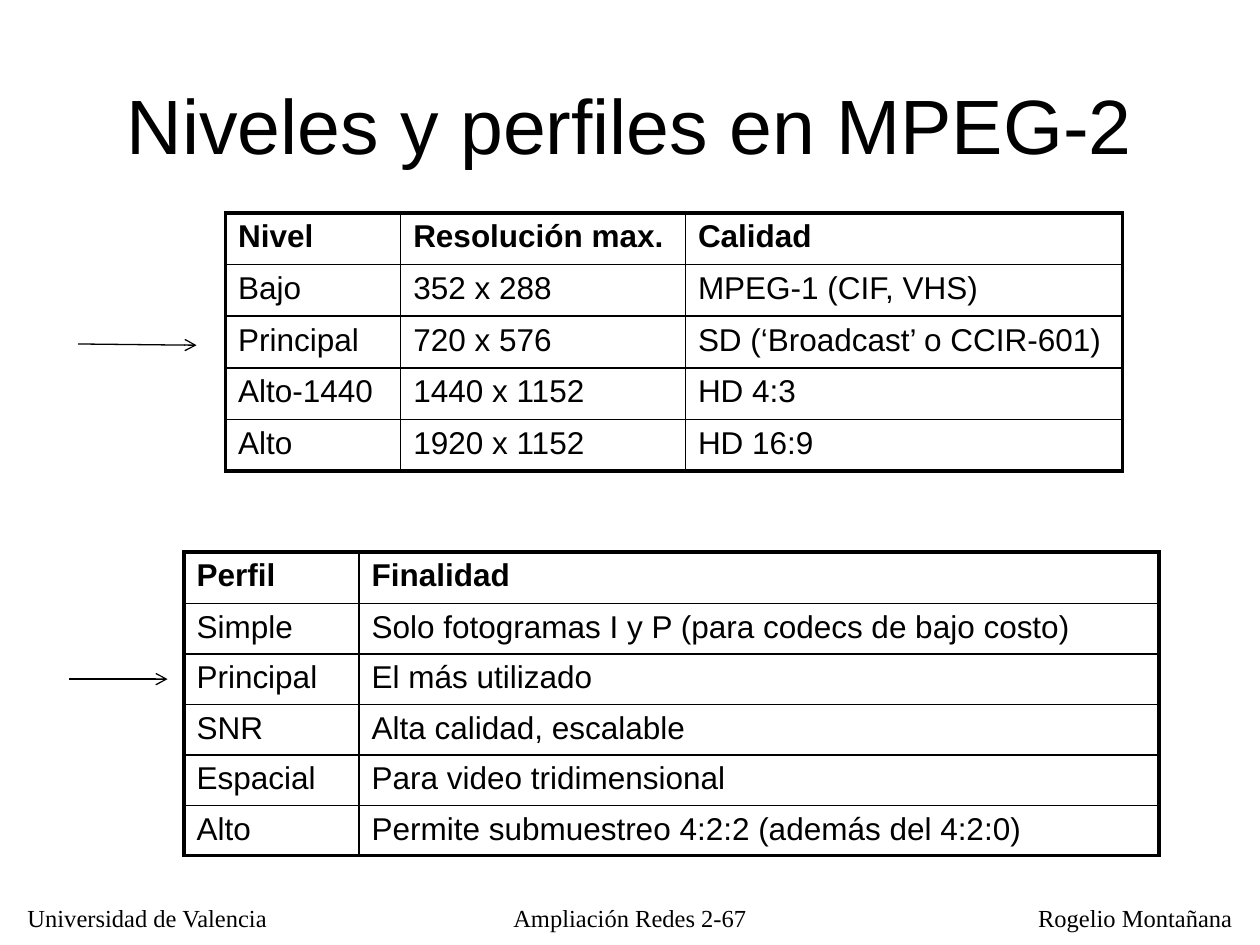
from dataclasses import dataclass

from lxml import etree
from pptx import Presentation
from pptx.dml.color import RGBColor
from pptx.enum import shapes, text
from pptx.oxml.ns import qn
from pptx.util import Inches, Pt


@dataclass(frozen=True)
class Theme:
    ink: RGBColor = RGBColor(0, 0, 0)
    sans: str = "Arial"
    serif: str = "Times New Roman"
    title: float = 44
    body: float = 18
    foot: float = 14
    thick: float = 2.25
    thin: float = 1
    arrow: float = 0.75


@dataclass(frozen=True)
class Grid:
    left: float
    top: float
    cols: list[float]
    head: float
    row: float
    data: list[list[str]]


@dataclass(frozen=True)
class Note:
    left: float
    width: float
    words: str
    align: text.PP_ALIGN
    wrap: bool


@dataclass(frozen=True)
class Arrow:
    left: float
    right: float
    start: float
    end: float


THEME = Theme()
ALIGN = text.PP_ALIGN

LEVELS = Grid(1.79, 1.69, [1.39, 2.26, 3.47], 0.41, 0.41, [
    ["Nivel", "Resolución max.", "Calidad"],
    ["Bajo", "352 x 288", "MPEG-1 (CIF, VHS)"],
    ["Principal", "720 x 576", "SD (‘Broadcast’ o CCIR-601)"],
    ["Alto-1440", "1440 x 1152", "HD 4:3"],
    ["Alto", "1920 x 1152", "HD 16:9"],
])
PROFILES = Grid(1.46, 4.38, [1.39, 6.35], 0.41, 0.4, [
    ["Perfil", "Finalidad"],
    ["Simple", "Solo fotogramas I y P (para codecs de bajo costo)"],
    ["Principal", "El más utilizado"],
    ["SNR", "Alta calidad, escalable"],
    ["Espacial", "Para video tridimensional"],
    ["Alto", "Permite submuestreo 4:2:2 (además del 4:2:0)"],
])
NOTES = [
    Note(0.12, 2.13, "Universidad de Valencia", ALIGN.LEFT, False),
    Note(8.14, 1.74, "Rogelio Montañana", ALIGN.LEFT, False),
    Note(3.9, 2.2, "Ampliación Redes 2-67", ALIGN.CENTER, True),
]
ARROWS = [Arrow(0.62, 1.56, 2.73, 2.74), Arrow(0.55, 1.33, 5.39, 5.39)]


def style(para, face: str, size: float, bold: bool = False) -> None:
    for run in para.runs:
        run.font.name = face
        run.font.size = Pt(size)
        run.font.bold = bold
        run.font.color.rgb = THEME.ink


def edge(cell, side: str, width: float) -> None:
    line = etree.SubElement(cell._tc.get_or_add_tcPr(), qn(f"a:ln{side}"),
                            w=str(Pt(width)))
    fill = etree.SubElement(line, qn("a:solidFill"))
    etree.SubElement(fill, qn("a:srgbClr"), val=str(THEME.ink))


def draw_grid(slide, grid: Grid) -> None:
    rows, cols = len(grid.data), len(grid.cols)
    high = [grid.head] + [grid.row] * (rows - 1)
    table = slide.shapes.add_table(
        rows, cols, Inches(grid.left), Inches(grid.top),
        Inches(sum(grid.cols)), Inches(sum(high))).table
    table.first_row = table.horz_banding = False
    for col, width in zip(table.columns, grid.cols):
        col.width = Inches(width)
    for r, line in enumerate(grid.data):
        table.rows[r].height = Inches(high[r])
        for c, words in enumerate(line):
            cell = table.cell(r, c)
            # Thick outer frame, thin inner rules
            outer = {"L": c == 0, "R": c == cols - 1,
                     "T": r == 0, "B": r == rows - 1}
            for side, rim in outer.items():
                edge(cell, side, THEME.thick if rim else THEME.thin)
            cell.fill.background()
            para = cell.text_frame.paragraphs[0]
            para.text = words
            para.space_before = Pt(0.8)
            style(para, THEME.sans, THEME.body, r == 0)


def draw_note(slide, note: Note) -> None:
    box = slide.shapes.add_textbox(Inches(note.left), Inches(7.12),
                                   Inches(note.width), Inches(0.33))
    box.text_frame.word_wrap = note.wrap
    para = box.text_frame.paragraphs[0]
    para.text = note.words
    para.alignment = note.align
    style(para, THEME.serif, THEME.foot)


def draw_arrow(slide, arrow: Arrow) -> None:
    line = slide.shapes.add_connector(
        shapes.MSO_CONNECTOR.STRAIGHT, Inches(arrow.left), Inches(arrow.start),
        Inches(arrow.right), Inches(arrow.end))
    line.line.color.rgb = THEME.ink
    line.line.width = Pt(THEME.arrow)
    etree.SubElement(line.line._get_or_add_ln(), qn("a:tailEnd"), type="arrow")
    etree.SubElement(line._element.spPr, qn("a:effectLst"))


def draw_title(slide, words: str) -> None:
    title = slide.shapes.title
    title.left, title.top = Inches(0.75), Inches(0.36)
    title.width, title.height = Inches(8.5), Inches(1.25)
    frame = title.text_frame
    frame.text = words
    frame.vertical_anchor = text.MSO_ANCHOR.MIDDLE
    frame.paragraphs[0].alignment = ALIGN.CENTER
    style(frame.paragraphs[0], THEME.sans, THEME.title)


def main() -> None:
    deck = Presentation()
    deck.slide_width, deck.slide_height = Inches(10), Inches(7.5)
    slide = deck.slides.add_slide(deck.slide_layouts.get_by_name("Title Only"))
    # Footer and title
    for note in NOTES:
        draw_note(slide, note)
    draw_title(slide, "Niveles y perfiles en MPEG-2")
    # Tables, with arrows at the main level and profile
    for grid in (LEVELS, PROFILES):
        draw_grid(slide, grid)
    for arrow in ARROWS:
        draw_arrow(slide, arrow)
    deck.save("out.pptx")


if __name__ == "__main__":
    main()
